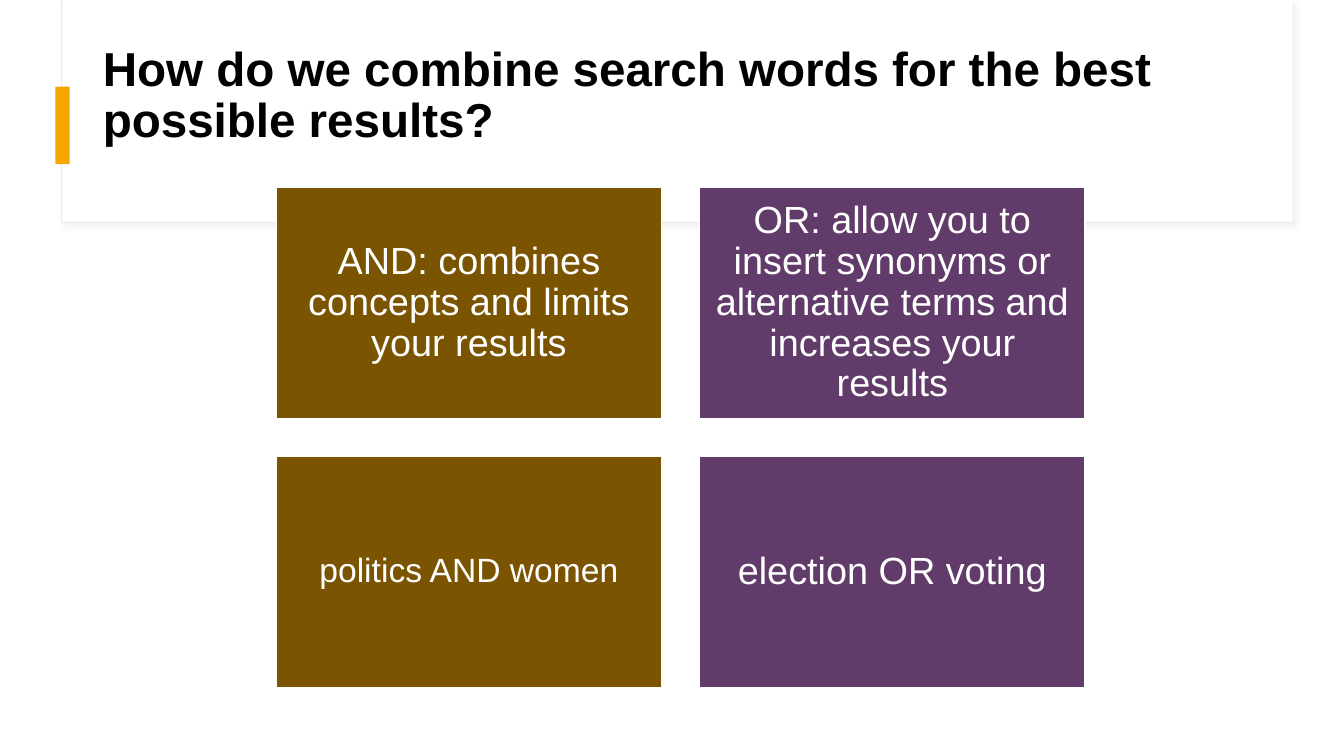
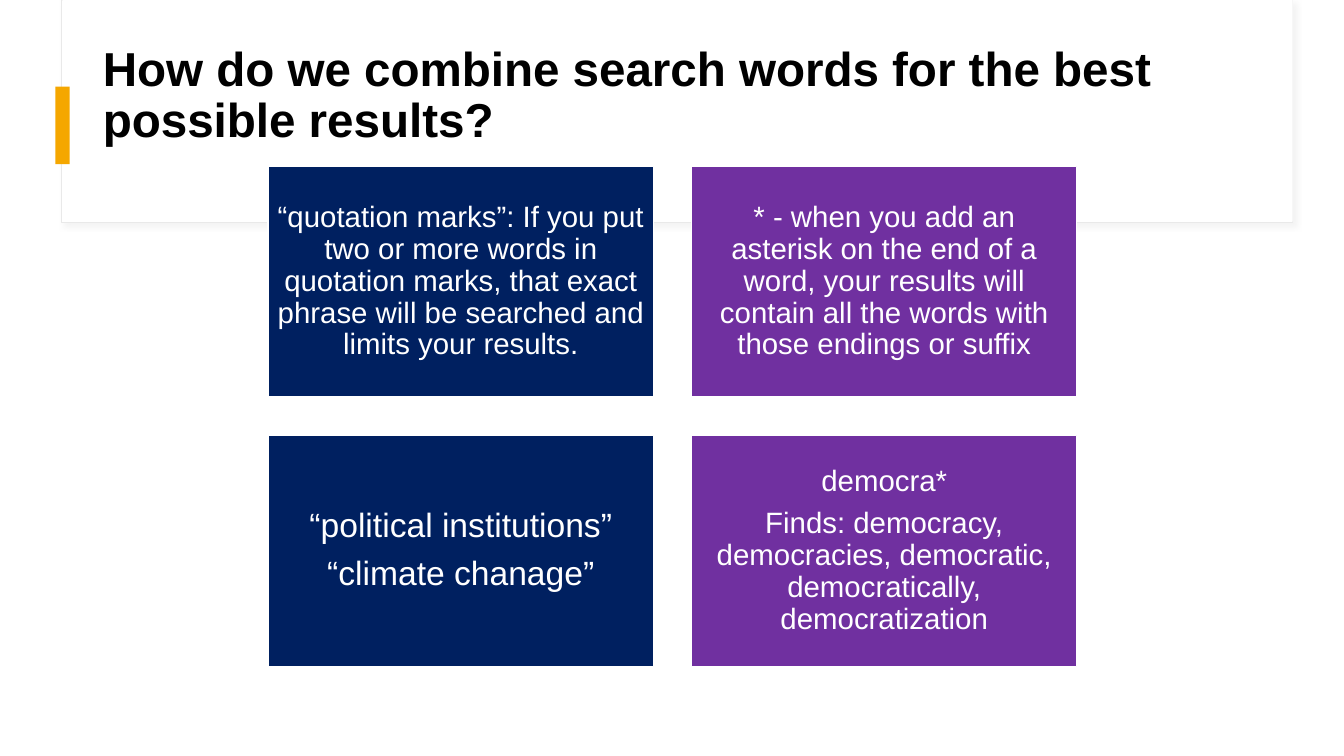
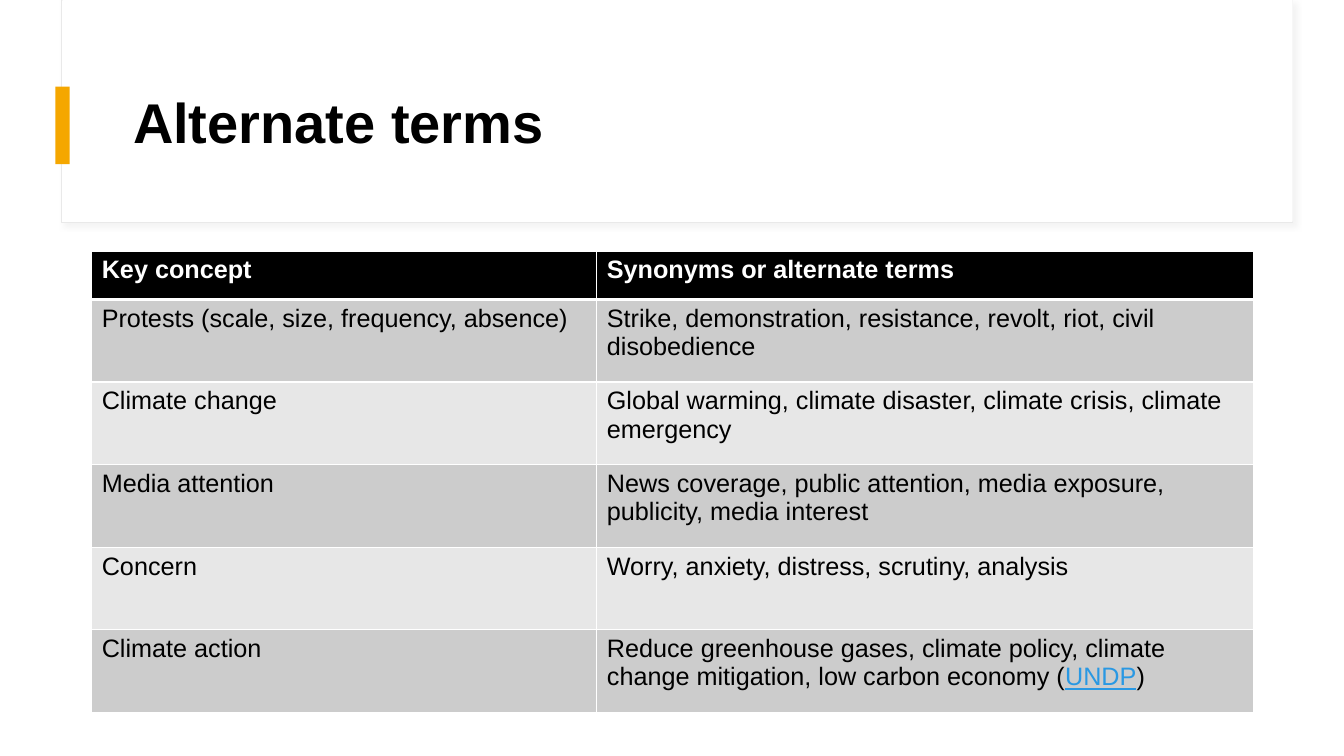
from lxml.etree import SubElement
from pptx import Presentation
from pptx.dml.color import RGBColor
from pptx.enum.shapes import MSO_SHAPE
from pptx.enum.text import MSO_ANCHOR, MSO_AUTO_SIZE, PP_ALIGN
from pptx.oxml import parse_xml
from pptx.oxml.ns import nsdecls, qn
from pptx.util import Inches, Pt

FONT = "Arial"
COLORS = {
    "black": "000000", "white": "FFFFFF", "frame": "E9E9E9", "shadow": "D9D9D9",
    "accent": "F5A700", "brown": "7A5400", "plum": "613B69", "navy": "002060",
    "purple": "7030A0", "row dark": "CCCCCC", "row light": "E7E7E7", "link": "2998E3",
}

# Title band on the layout: position, fill, line
BAND = [
    ((0.61, 0, 12.21, 2.21), "white", "frame"),
    ((0.62, 0, 12.2, 2.2), "white", None),
    ((0.55, 0.86, 0.14, 0.77), "accent", None),
]

QUESTION = "How do we combine search words for the best possible results?"
QUESTION_AT = (0.92, 0.37, 11.49, 1.18)
CARD_WIDTH, CARD_HEIGHT, CARD_GAP = 3.82, 2.29, 0.38

# Cards run left to right, then down: paragraphs, text size, inset
CARD_SLIDES = [
    {"origin": (2.74, 1.86), "columns": ("brown", "plum"), "cards": [
        (["AND: combines concepts and limits your results"], 27, 0.11),
        (["OR: allow you to insert synonyms or alternative terms and increases your results"],
         27, 0.11),
        (["politics AND women"], 24, 0.1),
        (["election OR voting"], 27, 0.11),
    ]},
    {"origin": (2.66, 1.65), "columns": ("navy", "purple"), "cards": [
        (["“quotation marks”: If you put two or more words in quotation marks, "
          "that exact phrase will be searched and limits your results."], 21, 0.09),
        (["* - when you add an asterisk on the end of a word, your results will "
          "contain all the words with those endings or suffix"], 21, 0.09),
        (["“political institutions”", "“climate chanage”"], 24, 0.1),
        (["democra*", "Finds: democracy, democracies, democratic, democratically, "
          "democratization"], 21, 0.09),
    ]},
]

TERMS_TITLE = "Alternate terms"
TERMS_TITLE_AT = (1.22, 0.6, 11.12, 1.29)
TERMS_AT = (0.91, 2.49, 11.52, 4.58)
TERMS_COLUMNS = (5.01, 6.51)
HEADER_HEIGHT, ROW_HEIGHT = 0.48, 0.82
LINK_WORD = "UNDP"
TERMS = [
    ("Key concept", "Synonyms or alternate terms"),
    ("Protests (scale, size, frequency, absence)",
     "Strike, demonstration, resistance, revolt, riot, civil disobedience"),
    ("Climate change", "Global warming, climate disaster, climate crisis, climate emergency"),
    ("Media attention",
     "News coverage, public attention, media exposure, publicity, media interest"),
    ("Concern", "Worry, anxiety, distress, scrutiny, analysis"),
    ("Climate action",
     "Reduce greenhouse gases, climate policy, climate change mitigation, "
     f"low carbon economy ({LINK_WORD})"),
]


def rgb(color):
    return RGBColor.from_string(COLORS[color])


def box(at):
    return [Inches(length) for length in at]


def style_run(run, size, color, bold=False):
    run.font.name = FONT
    run.font.size = Pt(size)
    run.font.bold = bold
    run.font.color.rgb = rgb(color)


def add_box(slide, at, fill, line=None, line_width=1):
    shape = slide.shapes.add_shape(MSO_SHAPE.RECTANGLE, *box(at))
    shape.shadow.inherit = False
    shape.fill.solid()
    shape.fill.fore_color.rgb = rgb(fill)
    if line:
        shape.line.color.rgb = rgb(line)
        shape.line.width = Pt(line_width)
    else:
        shape.line.fill.background()
    return shape


def add_soft_shadow(shape):
    effects = shape.element.spPr.find(qn("a:effectLst"))
    effects.append(parse_xml(
        f'<a:outerShdw {nsdecls("a")} blurRad="{Pt(4)}" dist="{Pt(3)}" dir="2700000">'
        f'<a:srgbClr val="{COLORS["shadow"]}"><a:alpha val="30000"/></a:srgbClr>'
        '</a:outerShdw>'))


def move_band_to_layout(slide, layout):
    """Draw the band on a slide, then hand it to the layout behind its placeholders."""
    for position, (at, fill, line) in enumerate(BAND):
        shape = add_box(slide, at, fill, line, 0.75)
        if line:
            add_soft_shadow(shape)
        shape.element.nvSpPr.cNvPr.set("id", str(100 + position))
        layout.shapes.element.insert(2 + position, shape.element)


def add_titled_slide(prs, layout, title, at, size):
    slide = prs.slides.add_slide(layout)
    heading = slide.shapes.title
    heading.left, heading.top, heading.width, heading.height = box(at)
    frame = heading.text_frame
    frame.text = title
    frame.auto_size = MSO_AUTO_SIZE.NONE
    frame.vertical_anchor = MSO_ANCHOR.MIDDLE
    paragraph = frame.paragraphs[0]
    paragraph.alignment = PP_ALIGN.LEFT
    paragraph.line_spacing = 0.9
    style_run(paragraph.runs[0], size, "black", bold=True)
    return slide


def add_card(slide, at, fill, paragraphs, size, inset):
    frame = add_box(slide, at, fill, "white").text_frame
    frame.word_wrap = True
    frame.vertical_anchor = MSO_ANCHOR.MIDDLE
    frame.margin_left = frame.margin_right = Inches(inset)
    frame.margin_top = frame.margin_bottom = Inches(inset)
    frame.text = "\n".join(paragraphs)
    for paragraph in frame.paragraphs:
        paragraph.alignment = PP_ALIGN.CENTER
        paragraph.line_spacing = 0.9
        paragraph.space_after = Pt(round(size * 0.35, 1))
        style_run(paragraph.runs[0], size, "white")


def add_cards(slide, origin, columns, cards):
    for index, card in enumerate(cards):
        row, column = divmod(index, len(columns))
        left = origin[0] + column * (CARD_WIDTH + CARD_GAP)
        top = origin[1] + row * (CARD_HEIGHT + CARD_GAP)
        add_card(slide, (left, top, CARD_WIDTH, CARD_HEIGHT), columns[column], *card)


def set_borders(cell, top, bottom):
    properties = cell._tc.get_or_add_tcPr()
    for side, width in (("L", 1), ("R", 1), ("T", top), ("B", bottom)):
        line = SubElement(properties, qn(f"a:ln{side}"), w=str(Pt(width)))
        fill = SubElement(line, qn("a:solidFill"))
        SubElement(fill, qn("a:srgbClr"), val=COLORS["white"])


def fill_cell(cell, text, row):
    is_header = row == 0
    set_borders(cell, top=3 if row == 1 else 1, bottom=3 if is_header else 1)
    cell.fill.solid()
    cell.fill.fore_color.rgb = rgb(
        "black" if is_header else "row dark" if row % 2 else "row light")
    paragraph = cell.text_frame.paragraphs[0]
    before, link, after = text.partition(LINK_WORD)
    for part in filter(None, (before, link, after)):
        run = paragraph.add_run()
        run.text = part
        style_run(run, 18, "white" if is_header else "black", bold=is_header)
        if part == LINK_WORD:
            run.font.color.rgb = rgb("link")
            run.font.underline = True


def add_terms_table(slide):
    table = slide.shapes.add_table(len(TERMS), len(TERMS_COLUMNS), *box(TERMS_AT)).table
    for column, width in zip(table.columns, TERMS_COLUMNS):
        column.width = Inches(width)
    for row, texts in enumerate(TERMS):
        table.rows[row].height = Inches(ROW_HEIGHT if row else HEADER_HEIGHT)
        for column, text in enumerate(texts):
            fill_cell(table.cell(row, column), text, row)


def main():
    prs = Presentation()
    prs.slide_width, prs.slide_height = Inches(13.33), Inches(7.5)
    layout = prs.slide_layouts.get_by_name("Title Only")
    for content in CARD_SLIDES:
        slide = add_titled_slide(prs, layout, QUESTION, QUESTION_AT, 34)
        add_cards(slide, **content)
    terms_slide = add_titled_slide(prs, layout, TERMS_TITLE, TERMS_TITLE_AT, 40)
    add_terms_table(terms_slide)
    move_band_to_layout(terms_slide, layout)
    prs.save("out.pptx")


if __name__ == "__main__":
    main()
